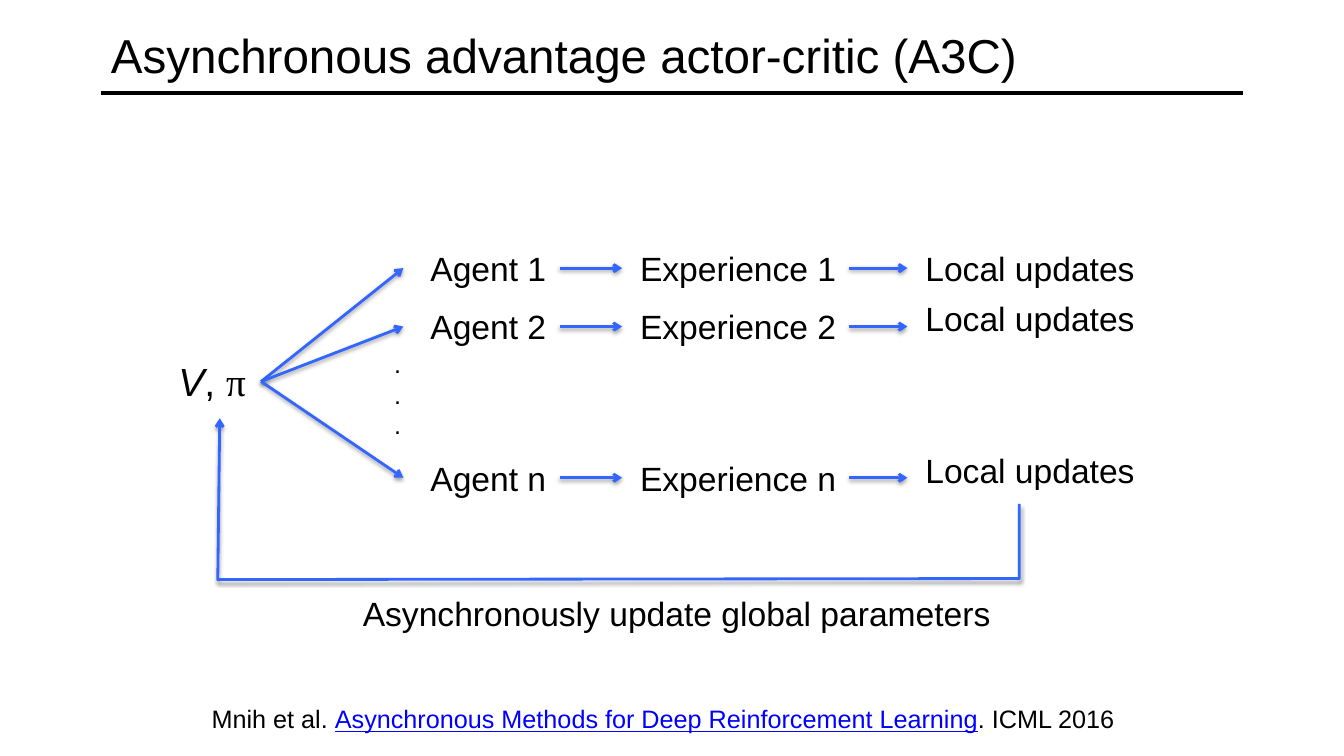
from lxml.etree import SubElement
from pptx import Presentation
from pptx.dml.color import RGBColor
from pptx.enum.shapes import MSO_CONNECTOR
from pptx.enum.text import MSO_ANCHOR, MSO_AUTO_SIZE, PP_ALIGN
from pptx.oxml.ns import qn
from pptx.util import Inches, Pt

BLACK = RGBColor(0x00, 0x00, 0x00)
LINK_BLUE = RGBColor(0x00, 0x00, 0xFF)
ARROW_BLUE = RGBColor(0x33, 0x66, 0xFF)
AGENT_ROWS = [("1", 2.41, 2.41), ("2", 2.99, 2.91), ("n", 4.49, 4.41)]
ROW_HEIGHT = 0.5


def write_runs(paragraph, runs, size):
    """Add runs given as (text, font format) pairs."""
    paragraph.alignment = PP_ALIGN.LEFT
    for text, changes in runs:
        run = paragraph.add_run()
        run.text = text
        font_format = {"name": "Arial", "size": Pt(size), "color": BLACK, **changes}
        run.font.color.rgb = font_format.pop("color")
        for attribute, value in font_format.items():
            setattr(run.font, attribute, value)


def add_text(slide, box, paragraphs, size=24, wrap=False):
    """Add a text box with one list of runs for each paragraph."""
    shape = slide.shapes.add_textbox(*map(Inches, box))
    frame = shape.text_frame
    frame.word_wrap = wrap
    frame.auto_size = MSO_AUTO_SIZE.SHAPE_TO_FIT_TEXT
    for index, runs in enumerate(paragraphs):
        paragraph = frame.add_paragraph() if index else frame.paragraphs[0]
        write_runs(paragraph, runs, size)
    return shape


def style_arrow(shape):
    """Give a line its blue colour, arrowhead and soft shadow."""
    shape.line.color.rgb = ARROW_BLUE
    shape.line.width = Pt(2)
    SubElement(shape.line._get_or_add_ln(), qn("a:tailEnd"), type="arrow")
    properties = shape._element.spPr
    for effects in properties.findall(qn("a:effectLst")):
        properties.remove(effects)
    effects = SubElement(properties, qn("a:effectLst"))
    shadow = SubElement(effects, qn("a:outerShdw"), blurRad="40000", dist="20000",
                        dir="5400000", rotWithShape="0")
    color = SubElement(shadow, qn("a:srgbClr"), val=str(BLACK))
    SubElement(color, qn("a:alpha"), val="38000")


def add_line(slide, start, end):
    """Add a straight connector between two points."""
    return slide.shapes.add_connector(MSO_CONNECTOR.STRAIGHT, *map(Inches, (*start, *end)))


def add_arrow(slide, source, end):
    """Add an arrow from the right side of a box to a point."""
    connector = add_line(slide, end, end)
    connector.begin_connect(source, 3)
    style_arrow(connector)


def add_title(slide):
    """Fill the title placeholder and underline it with a rule."""
    title = slide.shapes.title
    for attribute, value in {"left": 1, "top": 0.08, "width": 11.33, "height": 0.92}.items():
        setattr(title, attribute, Inches(value))
    title.text_frame.vertical_anchor = MSO_ANCHOR.MIDDLE
    write_runs(title.text_frame.paragraphs[0],
               [("Asynchronous advantage actor-critic (A3C)", {})], 34)
    rule = add_line(slide, (1, 0.92), (12.33, 0.92))
    rule.line.color.rgb = BLACK
    rule.line.width = Pt(3)
    SubElement(rule._element.spPr, qn("a:effectLst"))


def add_agent_row(slide, parameters, label, top, update_top):
    """Add one chain of agent, experience and local updates."""
    middle = top + ROW_HEIGHT / 2
    agent = add_text(slide, (4.17, top, 1.38, ROW_HEIGHT), [[(f"Agent {label}", {})]])
    experience = add_text(slide, (6.25, top, 2.17, ROW_HEIGHT),
                          [[(f"Experience {label}", {})]])
    add_text(slide, (9.08, update_top, 2.3, ROW_HEIGHT), [[("Local updates", {})]])
    for source, end_left in ((parameters, 4), (agent, 6.17), (experience, 9)):
        add_arrow(slide, source, (end_left, middle))


def add_feedback_path(slide):
    """Draw the path from the local updates back to the parameters."""
    start, *corners = [(Inches(x), Inches(y)) for x, y in
                       ((10.11, 5), (10.11, 5.74), (2.16, 5.75), (2.18, 4.15))]
    builder = slide.shapes.build_freeform(*start)
    builder.add_line_segments(corners, close=False)
    feedback = builder.convert_to_shape()
    feedback.fill.background()
    style_arrow(feedback)


def main():
    """Build the slide and save it."""
    presentation = Presentation()
    presentation.slide_width = Inches(13.33)
    presentation.slide_height = Inches(7.5)
    slide = presentation.slides.add_slide(presentation.slide_layouts[5])
    add_title(slide)
    parameters = add_text(slide, (1.67, 3.5, 0.92, 0.57), [[
        ("V", {"italic": True}), (", ", {}), ("π", {"name": "Times New Roman"})]],
        size=28, wrap=True)
    for label, top, update_top in AGENT_ROWS:
        add_agent_row(slide, parameters, label, top, update_top)
    add_text(slide, (3.81, 3.41, 0.27, 1.01), [[(".", {})]] * 3, size=18)
    add_feedback_path(slide)
    add_text(slide, (3.5, 5.83, 6.5, ROW_HEIGHT),
             [[("Asynchronously update global parameters", {})]])
    add_text(slide, (2, 6.93, 9.42, 0.4), [[
        ("Mnih et al. ", {}),
        ("Asynchronous Methods for Deep Reinforcement Learning",
         {"color": LINK_BLUE, "underline": True}),
        (". ICML 2016", {})]], size=18, wrap=True)
    presentation.save("out.pptx")


if __name__ == "__main__":
    main()
